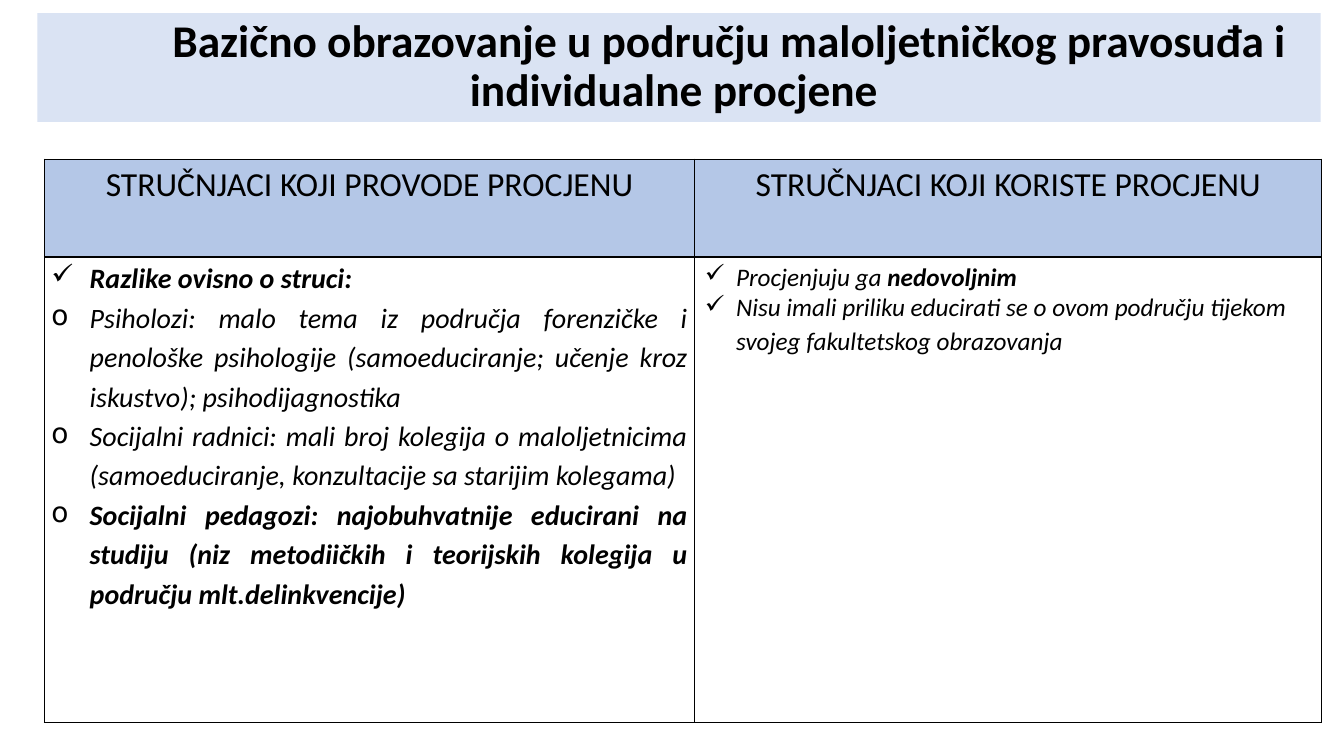
from lxml import etree
from pptx import Presentation
from pptx import util as u
from pptx.dml.color import RGBColor
from pptx.enum import shapes, text
from pptx.oxml import ns

BLACK = RGBColor(0x00, 0x00, 0x00)
TITLE_FILL = RGBColor(0xDA, 0xE3, 0xF3)
HEADER_FILL = RGBColor(0xB4, 0xC7, 0xE7)
FONT = "Calibri"
CHECK, CIRCLE = "✓", "o"

TITLE = "\t\tBazično obrazovanje u području maloljetničkog pravosuđa i individualne procjene "
HEADERS = ["STRUČNJACI KOJI PROVODE PROCJENU", "STRUČNJACI KOJI KORISTE PROCJENU"]
ASSESSORS = [
    (CHECK, [("Razlike ovisno o struci:", True)]),
    (CIRCLE, [("Psiholozi: malo tema iz područja forenzičke i penološke psihologije "
               "(samoeduciranje; učenje kroz iskustvo); psihodijagnostika", False)]),
    (CIRCLE, [("Socijalni radnici: mali broj kolegija o maloljetnicima "
               "(samoeduciranje, konzultacije sa starijim kolegama)", False)]),
    (CIRCLE, [("Socijalni pedagozi: najobuhvatnije educirani na studiju "
               "(niz metodiičkih i teorijskih kolegija u području mlt.delinkvencije)", True)]),
]
USERS = [
    (CHECK, [("Procjenjuju ga ", False), ("nedovoljnim", True)]),
    (CHECK, [("Nisu imali priliku educirati se o ovom području tijekom "
              "svojeg fakultetskog obrazovanja", False)]),
]

TITLE_BOX = (0.37, 0.13, 12.73, 1.08)
TABLE_LEFT, TABLE_TOP = 0.44, 1.58
COLUMNS = [6.45, 6.22]
ROWS = [0.97, 4.62]


def style(font, size, bold=False, italic=False):
    font.name = FONT
    font.size = u.Pt(size)
    font.bold = bold
    font.italic = italic
    font.color.rgb = BLACK


def add_borders(cell):
    properties = cell._tc.get_or_add_tcPr()
    for index, side in enumerate(("lnL", "lnR", "lnT", "lnB")):
        line = etree.Element(ns.qn(f"a:{side}"), w=str(u.Pt(1)))
        fill = etree.SubElement(line, ns.qn("a:solidFill"))
        etree.SubElement(fill, ns.qn("a:srgbClr"), val=str(BLACK))
        properties.insert(index, line)


def add_bullet(paragraph, mark, indent):
    properties = paragraph._p.get_or_add_pPr()
    properties.set("marL", str(u.Inches(indent)))
    properties.set("indent", str(-u.Inches(indent)))
    etree.SubElement(properties, ns.qn("a:buChar"), char=mark)


def fill_list(cell, items, size, indent, alignment, spacing):
    frame = cell.text_frame
    for index, (mark, runs) in enumerate(items):
        paragraph = frame.add_paragraph() if index else frame.paragraphs[0]
        paragraph.alignment = alignment
        paragraph.line_spacing = spacing
        add_bullet(paragraph, mark, indent)
        for words, bold in runs:
            run = paragraph.add_run()
            run.text = words
            style(run.font, size, bold, True)
    return paragraph


def add_title(slide):
    shape = slide.shapes.add_shape(
        shapes.MSO_SHAPE.RECTANGLE, *(u.Inches(length) for length in TITLE_BOX))
    shape.shadow.inherit = False
    shape.fill.solid()
    shape.fill.fore_color.rgb = TITLE_FILL
    shape.line.fill.background()
    frame = shape.text_frame
    frame.word_wrap = True
    frame.vertical_anchor = text.MSO_ANCHOR.MIDDLE
    paragraph = frame.paragraphs[0]
    paragraph.alignment = text.PP_ALIGN.CENTER
    paragraph.line_spacing = 0.9
    paragraph.add_run().text = TITLE
    style(paragraph.font, 32.4, True)


def add_comparison(slide):
    table = slide.shapes.add_table(
        len(ROWS), len(COLUMNS), u.Inches(TABLE_LEFT), u.Inches(TABLE_TOP),
        u.Inches(sum(COLUMNS)), u.Inches(sum(ROWS))).table
    table.first_row = table.horz_banding = False
    for column, width in zip(table.columns, COLUMNS):
        column.width = u.Inches(width)
    for row, height in zip(table.rows, ROWS):
        row.height = u.Inches(height)
    for cell in table.iter_cells():
        cell.fill.background()
        add_borders(cell)
    for column, heading in enumerate(HEADERS):
        cell = table.cell(0, column)
        cell.fill.solid()
        cell.fill.fore_color.rgb = HEADER_FILL
        paragraph = cell.text_frame.paragraphs[0]
        paragraph.text = heading
        paragraph.alignment = text.PP_ALIGN.CENTER
        style(paragraph.font, 24)

    assessors, users = table.cell(1, 0), table.cell(1, 1)
    assessors.margin_left = assessors.margin_right = u.Inches(0.07)
    assessors.margin_top = assessors.margin_bottom = 0
    fill_list(assessors, ASSESSORS, 20, 0.38, text.PP_ALIGN.JUSTIFY, 1.15)
    last = fill_list(users, USERS, 18, 0.31, text.PP_ALIGN.LEFT, 1)
    closing_space = last.add_run()
    closing_space.text = " "
    style(closing_space.font, 20)


def main():
    presentation = Presentation()
    presentation.slide_width = u.Inches(13.33)
    presentation.slide_height = u.Inches(7.5)
    slide = presentation.slides.add_slide(presentation.slide_layouts[6])
    add_title(slide)
    add_comparison(slide)
    presentation.save("out.pptx")


if __name__ == "__main__":
    main()
